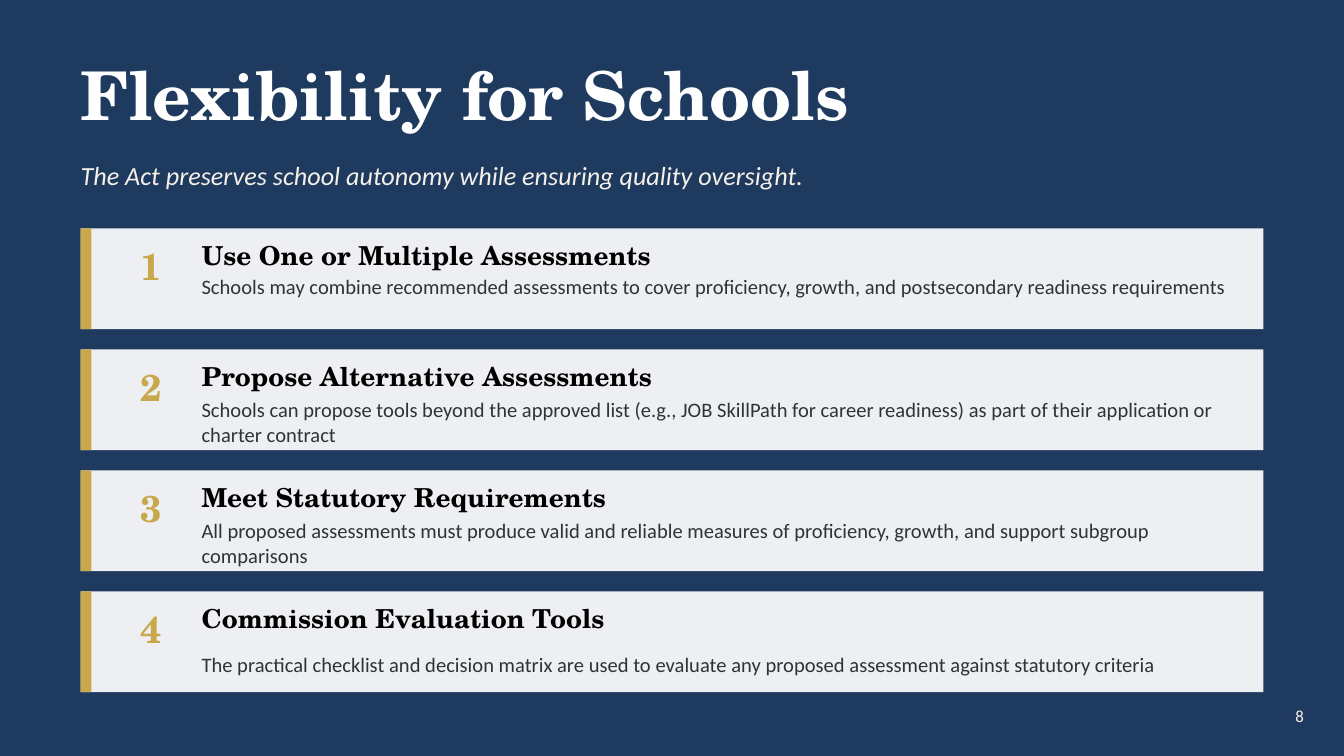
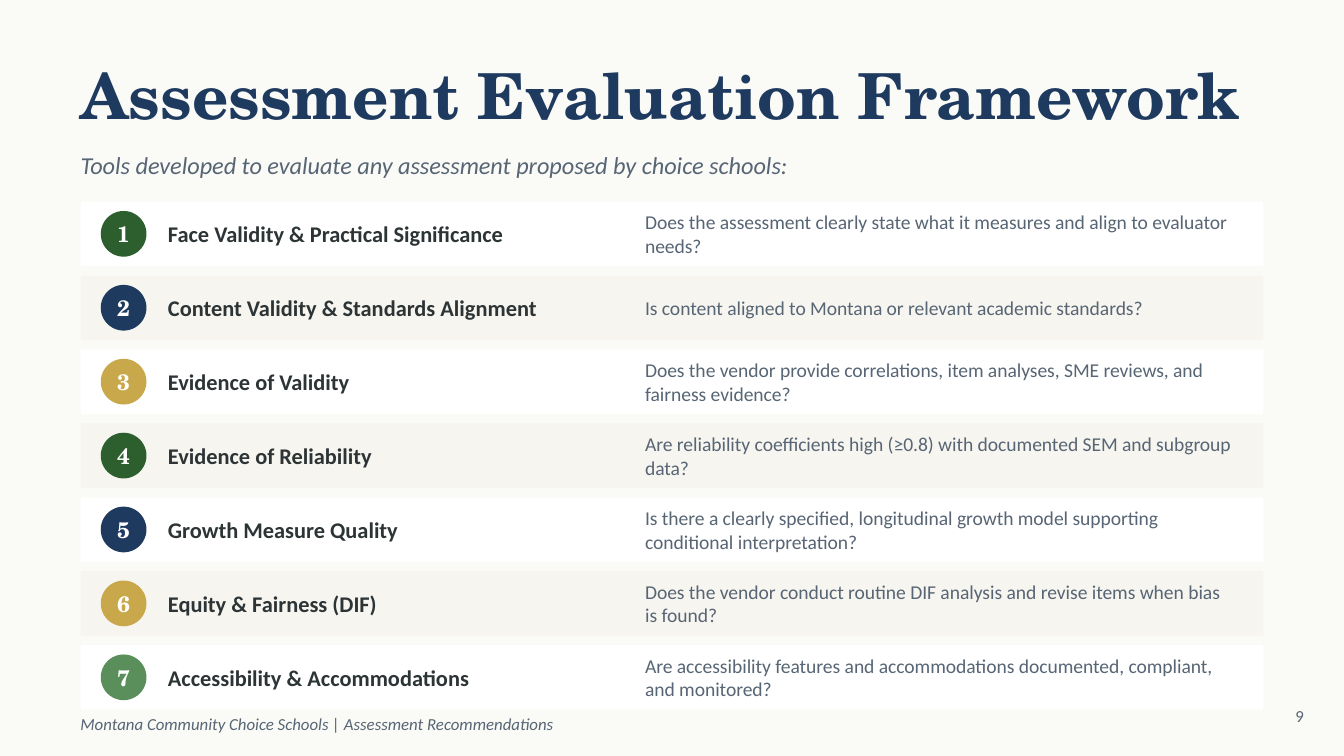
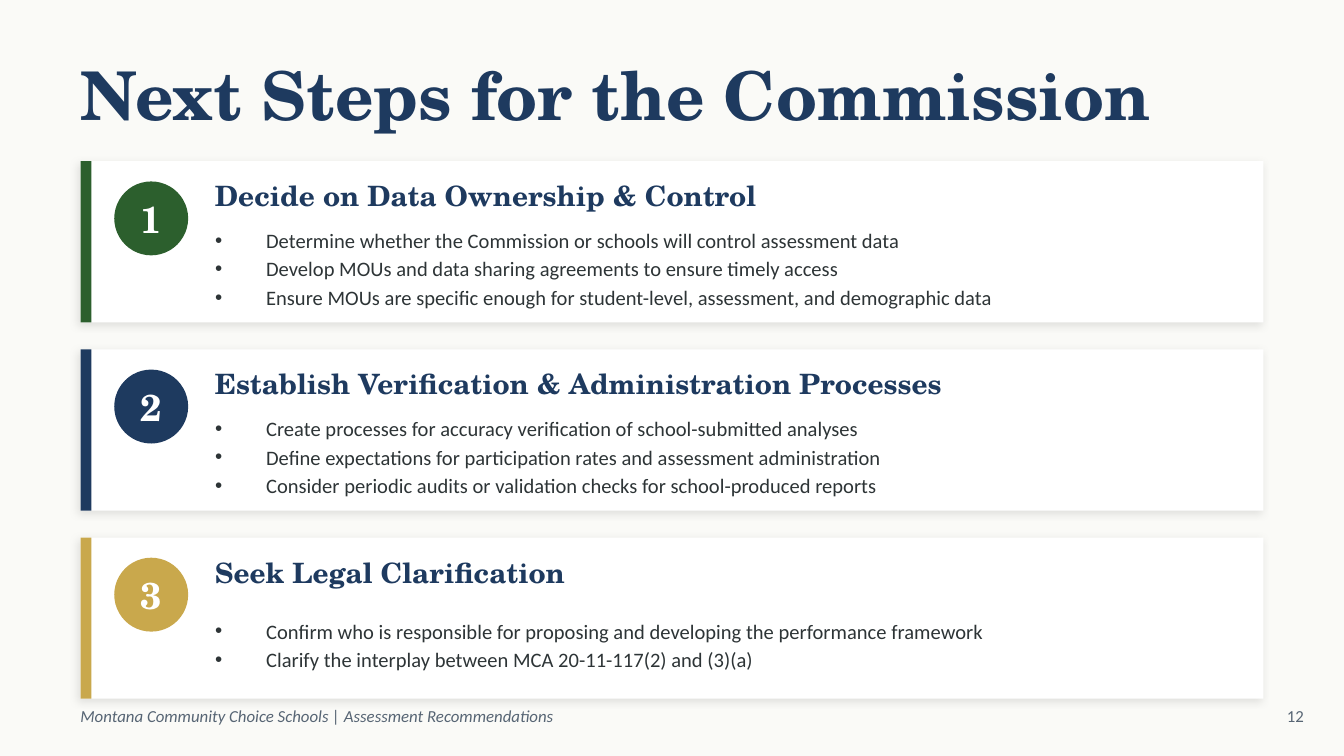
from dataclasses import dataclass

from lxml.etree import SubElement
from pptx import Presentation
from pptx.dml.color import RGBColor
from pptx.enum.shapes import MSO_SHAPE
from pptx.enum.text import MSO_ANCHOR, MSO_AUTO_SIZE, PP_ALIGN
from pptx.oxml.ns import qn
from pptx.util import Emu, Pt

PX = 9144  # 100 px to the inch
LEFT, WIDTH, BAR = 60, 880, 8
TITLE_ONLY, COMPARISON = 5, 4


@dataclass(frozen=True)
class Theme:
    serif: str = "TeX Gyre Schola"
    sans: str = "Calibri"
    navy: str = "1E3A5F"
    gold: str = "C9A84C"
    green: str = "2C5F2D"
    sage: str = "5A8F5C"
    paper: str = "FAFAF7"
    cream: str = "F5F0E8"
    stripe: str = "F7F5F0"
    white: str = "FFFFFF"
    black: str = "000000"
    ink: str = "2D3436"
    grey: str = "576574"
    title: float = 36
    long_title: float = 34
    number: float = 20
    step: float = 15
    heading: float = 14
    tagline: float = 13
    label: float = 12
    body: float = 11
    question: float = 10.5
    small: float = 9


T = Theme()

OPTIONS = [
    ("Use One or Multiple Assessments", 27,
     "Schools may combine recommended assessments to cover proficiency, growth, "
     "and postsecondary readiness requirements"),
    ("Propose Alternative Assessments", 38,
     "Schools can propose tools beyond the approved list (e.g., JOB SkillPath for "
     "career readiness) as part of their application or charter contract"),
    ("Meet Statutory Requirements", 38,
     "All proposed assessments must produce valid and reliable measures of "
     "proficiency, growth, and support subgroup comparisons"),
    ("Commission Evaluation Tools", 38,
     "The practical checklist and decision matrix are used to evaluate any "
     "proposed assessment against statutory criteria"),
]

CRITERIA = [
    ("Face Validity & Practical Significance", T.green,
     "Does the assessment clearly state what it measures and align to evaluator needs?"),
    ("Content Validity & Standards Alignment", T.navy,
     "Is content aligned to Montana or relevant academic standards?"),
    ("Evidence of Validity", T.gold,
     "Does the vendor provide correlations, item analyses, SME reviews, and "
     "fairness evidence?"),
    ("Evidence of Reliability", T.green,
     "Are reliability coefficients high (≥0.8) with documented SEM and subgroup data?"),
    ("Growth Measure Quality", T.navy,
     "Is there a clearly specified, longitudinal growth model supporting "
     "conditional interpretation?"),
    ("Equity & Fairness (DIF)", T.gold,
     "Does the vendor conduct routine DIF analysis and revise items when bias is found?"),
    ("Accessibility & Accommodations", T.sage,
     "Are accessibility features and accommodations documented, compliant, and "
     "monitored?"),
]

STEPS = [
    ("Decide on Data Ownership & Control", T.green, [
        "Determine whether the Commission or schools will control assessment data",
        "Develop MOUs and data sharing agreements to ensure timely access",
        "Ensure MOUs are specific enough for student-level, assessment, and "
        "demographic data"]),
    ("Establish Verification & Administration Processes", T.navy, [
        "Create processes for accuracy verification of school-submitted analyses",
        "Define expectations for participation rates and assessment administration",
        "Consider periodic audits or validation checks for school-produced reports"]),
    ("Seek Legal Clarification", T.gold, [
        "Confirm who is responsible for proposing and developing the performance "
        "framework",
        "Clarify the interplay between MCA 20-11-117(2) and (3)(a)"]),
]


def emu(*lengths):
    return [Emu(n * PX) for n in lengths]


def add_bullet(p, indent):
    pPr = p._p.get_or_add_pPr()
    pPr.set("marL", str(indent * PX))
    pPr.set("indent", str(-indent * PX))
    SubElement(pPr, qn("a:buChar"), char="•")


def write(sp, text, size, color, font=T.sans, bold=False, italic=False,
          align=PP_ALIGN.LEFT, pad=0, bullets=False):
    """Fill a shape with one line, or with a list of paragraphs."""
    tf = sp.text_frame
    tf.word_wrap = True
    tf.auto_size = MSO_AUTO_SIZE.NONE
    tf.vertical_anchor = MSO_ANCHOR.MIDDLE
    tf.margin_left = tf.margin_right = Emu(pad * PX)
    tf.margin_top = tf.margin_bottom = Emu(0)
    for i, line in enumerate([text] if isinstance(text, str) else text):
        p = tf.add_paragraph() if i else tf.paragraphs[0]
        if bullets:
            add_bullet(p, 38)
        p.alignment = align
        p.space_before = Pt(0)
        p.space_after = Pt(2 if bullets else 0)
        r = p.add_run()
        r.text = line
        r.font.name, r.font.size = font, Pt(size)
        r.font.bold, r.font.italic = bold, italic
        r.font.color.rgb = RGBColor.from_string(color)


def add_text(s, box, text, size, color, **style):
    write(s.shapes.add_textbox(*emu(*box)), text, size, color, **style)


def add_block(s, box, color, kind=MSO_SHAPE.RECTANGLE, opacity=None):
    sp = s.shapes.add_shape(kind, *emu(*box))
    sp.shadow.inherit = False
    sp.line.fill.background()
    sp.fill.solid()
    sp.fill.fore_color.rgb = RGBColor.from_string(color)
    if opacity:
        rgb = sp.element.spPr.find(".//" + qn("a:srgbClr"))
        SubElement(rgb, qn("a:alpha"), val=str(opacity * 1000))
    return sp


def add_soft_shadow(sp):
    effects = sp.element.spPr.find(qn("a:effectLst"))
    shadow = SubElement(effects, qn("a:outerShdw"), blurRad=str(Pt(4)),
                        dist=str(Pt(2)), dir=str(135 * 60000), algn="bl",
                        rotWithShape="0")
    rgb = SubElement(shadow, qn("a:srgbClr"), val=T.black)
    SubElement(rgb, qn("a:alpha"), val="10000")


def add_badge(s, x, y, d, number, color, size):
    box = (x, y, d, d)
    add_block(s, box, color, MSO_SHAPE.OVAL)
    add_text(s, box, str(number), size, T.white, font=T.serif, bold=True,
             align=PP_ALIGN.CENTER)


def place(ph, box):
    ph.left, ph.top, ph.width, ph.height = emu(*box)


def add_page(prs, title, page, size=T.title, layout=TITLE_ONLY, dark=False,
             footer_top=None):
    s = prs.slides.add_slide(prs.slide_layouts[layout])
    s.background.fill.solid()
    s.background.fill.fore_color.rgb = RGBColor.from_string(
        T.navy if dark else T.paper)
    place(s.shapes.title, (LEFT, 35, 900, 70))
    write(s.shapes.title, title, size, T.white if dark else T.navy,
          font=T.serif, bold=True)
    if footer_top:
        add_text(s, (50, footer_top, 900, 35),
                 "Montana Community Choice Schools | Assessment Recommendations",
                 T.small, T.grey, italic=True, pad=10)
    add_text(s, (930, 515, 50, 35), str(page), T.small,
             T.cream if dark else T.grey, align=PP_ALIGN.RIGHT, pad=10)
    return s


def option_card(s, box, number, heading, detail_top, detail):
    x, y, w, h = box
    add_block(s, box, T.white, opacity=92)
    add_block(s, (x, y, BAR, h), T.gold)
    add_text(s, (x + 30, y + 5, 45, 45), str(number), T.number, T.gold,
             font=T.serif, bold=True, align=PP_ALIGN.CENTER)
    add_text(s, (x + 90, y + 5, w - 110, 30), heading, T.heading, T.black,
             font=T.serif, bold=True)
    add_text(s, (x + 90, y + detail_top, w - 110, 32), detail, T.body, T.ink)


def criterion_row(s, box, number, label, color, question):
    x, y, w, h = box
    add_block(s, box, T.white if number % 2 else T.stripe)
    add_badge(s, x + 15, y + 7, h - 14, number, color, T.label)
    add_text(s, (x + 65, y + 2, 350, h - 4), label, T.label, T.ink, bold=True)
    add_text(s, (x + 420, y + 2, w - 440, h - 4), question, T.question, T.grey)


def step_card(s, box, number, heading, color, actions, ph):
    x, y, w, h = box
    add_soft_shadow(add_block(s, box, T.white))
    add_block(s, (x, y, BAR, h), color)
    add_badge(s, x + 25, y + 15, 55, number, color, T.number)
    add_text(s, (x + 100, y + 8, w - 130, 35), heading, T.step, T.navy,
             font=T.serif, bold=True)
    place(ph, (x + 100, y + 45, w - 130, h - 50))
    write(ph, actions, T.body, T.ink, bullets=True)
    s.shapes.element.append(ph.element)  # bring the list in front of its card


def flexibility_slide(prs):
    s = add_page(prs, "Flexibility for Schools", 8, dark=True)
    add_text(s, (LEFT, 110, 850, 40),
             "The Act preserves school autonomy while ensuring quality oversight.",
             T.heading, T.cream, italic=True)
    for i, option in enumerate(OPTIONS):
        option_card(s, (LEFT, 170 + 90 * i, WIDTH, 75), i + 1, *option)


def framework_slide(prs):
    s = add_page(prs, "Assessment Evaluation Framework", 9, size=T.long_title,
                 footer_top=521)
    add_text(s, (LEFT, 105, 900, 35),
             "Tools developed to evaluate any assessment proposed by choice schools:",
             T.tagline, T.grey, italic=True)
    for i, criterion in enumerate(CRITERIA):
        criterion_row(s, (LEFT, 150 + 55 * i, WIDTH, 48), i + 1, *criterion)


def next_steps_slide(prs):
    s = add_page(prs, "Next Steps for the Commission", 12, layout=COMPARISON,
                 footer_top=515)
    _, *bodies = s.placeholders
    for i, (step, ph) in enumerate(zip(STEPS, bodies)):
        step_card(s, (LEFT, 120 + 140 * i, WIDTH, 120), i + 1, *step, ph)
    for ph in bodies[len(STEPS):]:
        s.shapes.element.remove(ph.element)


def main():
    prs = Presentation()
    prs.slide_width = Emu(1000 * PX)
    prs.slide_height = Emu(prs.slide_width * 9 // 16)
    flexibility_slide(prs)
    framework_slide(prs)
    next_steps_slide(prs)
    prs.save("out.pptx")


if __name__ == "__main__":
    main()
